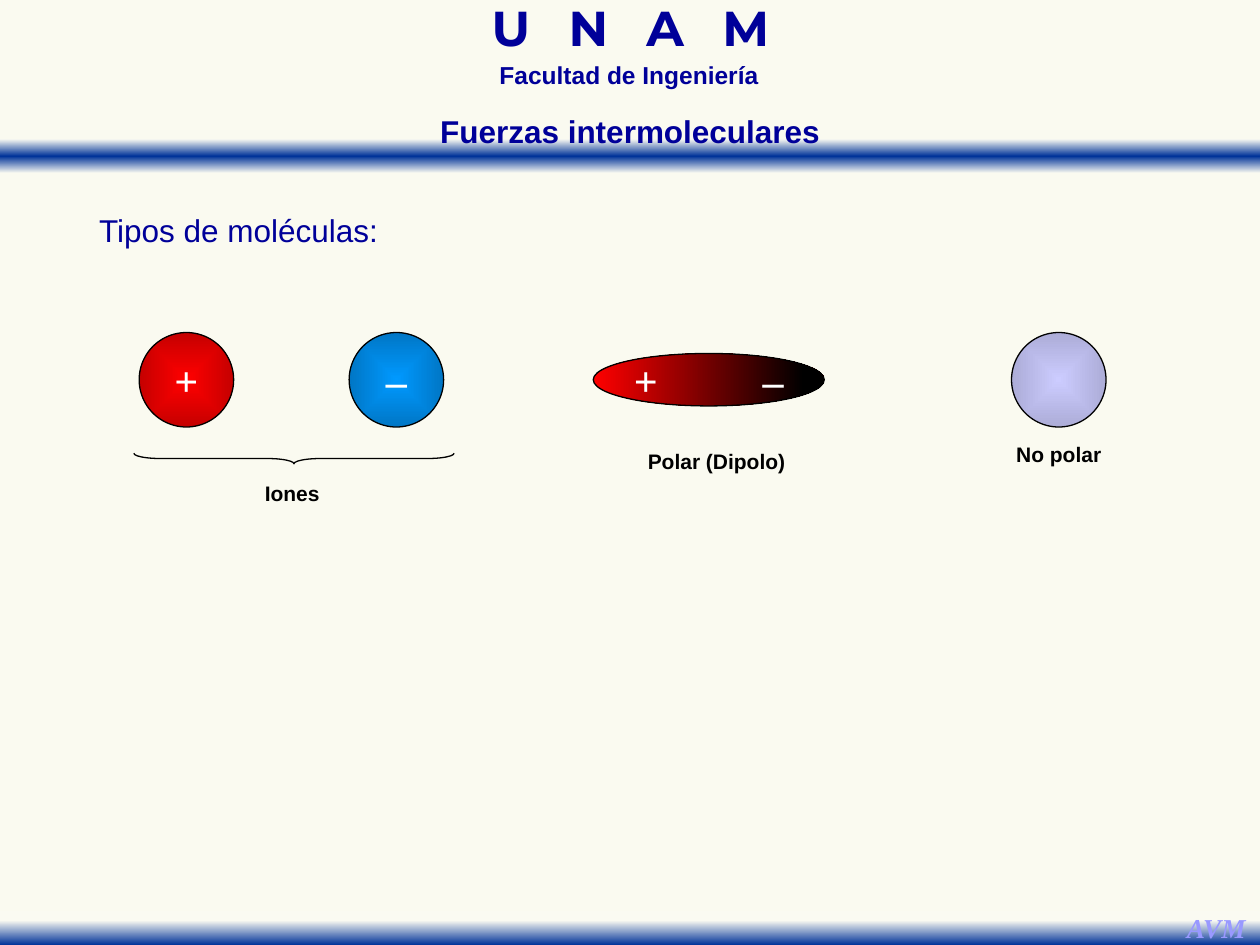
from lxml import etree
from pptx import Presentation
from pptx import util as u
from pptx.dml import color
from pptx.enum import shapes, text
from pptx.oxml import ns

Pt = u.Pt
ink = color.RGBColor.from_string
NAVY, WHITE, BLACK = "000099", "FFFFFF", "000000"


def shade(shape, stops, angle=None):
    shape.shadow.inherit = False
    shape.line.fill.background()
    shape.fill.gradient()
    gradient = shape.element.spPr.find(ns.qn("a:gradFill"))
    for child in list(gradient):
        gradient.remove(child)
    stop_list = etree.SubElement(gradient, ns.qn("a:gsLst"))
    for place, value in stops:
        stop = etree.SubElement(stop_list, ns.qn("a:gs"), pos=str(place * 1000))
        etree.SubElement(stop, ns.qn("a:srgbClr"), val=value)
    if angle is None:
        focus = etree.SubElement(gradient, ns.qn("a:path"), path="shape")
        sides = {side: "50000" for side in "ltrb"}
        etree.SubElement(focus, ns.qn("a:fillToRect"), **sides)
    else:
        etree.SubElement(gradient, ns.qn("a:lin"), ang=str(angle * 60000), scaled="1")


def write(shape, runs, size, font, tint, bold=True, italic=False, wrap=False):
    frame = shape.text_frame
    frame.word_wrap = wrap
    para = frame.paragraphs[0]
    para.alignment = text.PP_ALIGN.CENTER
    for words, spacing in runs:
        span = para.add_run()
        span.text = words
        span.font.size = Pt(size)
        span.font.name = font
        span.font.bold = bold
        span.font.italic = italic
        span.font.color.rgb = ink(tint)
        if spacing:
            span.font._element.set("spc", str(spacing * 100))
    return para


deck = Presentation()
deck.slide_width, deck.slide_height = Pt(720), Pt(540)
page = deck.slides.add_slide(deck.slide_layouts[6])
page.background.fill.solid()
page.background.fill.fore_color.rgb = ink("FAFAF0")

bands = [
    (79.5, [(0, "FAFAF2"), (50, "003399"), (100, "FAFAF2")]),
    (520.5, [(28, "FAFAF2"), (100, "003399")]),
]
for top, stops in bands:
    band = page.shapes.add_shape(
        shapes.MSO_SHAPE.RECTANGLE, 0, Pt(top), Pt(720), Pt(19.5))
    shade(band, stops, 90)

headings = [
    (219.5, 4.25, 281.5, 31, [("U N A ", 7), ("M", 0)], 28, "Montserrat", True, 0.7),
    (231, 35.25, 257, 19.5, [("Facultad de Ingeniería", 0)], 14, "Arial", True, 0.7),
    (204, 60.5, 312, 29, [("Fuerzas intermoleculares", 0)], 18, "Arial", True, 1),
    (49.5, 117, 312, 29, [("Tipos de moléculas:", 0)], 18, "Arial", False, 1),
]
for left, top, width, height, runs, size, font, bold, leading in headings:
    box = page.shapes.add_textbox(Pt(left), Pt(top), Pt(width), Pt(height))
    para = write(box, runs, size, font, NAVY, bold, wrap=True)
    para.line_spacing = leading
para.alignment = text.PP_ALIGN.JUSTIFY

signature = page.shapes.add_textbox(Pt(670.5), Pt(517), Pt(49), Pt(26.5))
write(signature, [("AVM", 0)], 15.6, "Times New Roman", "9999FF", italic=True)

molecules = [
    (79.5, 190, 54, 54, [(0, "FF0000"), (100, "C50000")], None, [("+", 0)]),
    (199.5, 190, 54, 54, [(0, "0099FF"), (100, "0076C5")], None, [("–", 0)]),
    (339, 202, 132, 30, [(0, "FF0000"), (91, "000000")], 0,
     [("+", 0), (" ", 54), ("–", 0)]),
    (578, 190, 54, 54, [(0, "CCCCFF"), (100, "ACACD7")], None, []),
]
for left, top, width, height, stops, angle, charges in molecules:
    molecule = page.shapes.add_shape(
        shapes.MSO_SHAPE.OVAL, Pt(left), Pt(top), Pt(width), Pt(height))
    shade(molecule, stops, angle)
    molecule.line.color.rgb = ink(BLACK)
    molecule.line.width = Pt(0.75)
    molecule.text_frame.vertical_anchor = text.MSO_ANCHOR.MIDDLE
    write(molecule, charges, 24, "Times New Roman", WHITE)

brace = page.shapes.add_shape(
    shapes.MSO_SHAPE.LEFT_BRACE, Pt(165), Pt(170.5), Pt(6), Pt(183))
brace.rotation = 270
brace.adjustments[0] = 2.54
brace.adjustments[1] = 0.5
brace.shadow.inherit = False
brace.fill.background()
brace.line.color.rgb = ink(BLACK)
brace.line.width = Pt(0.75)

labels = [
    (144, 271, 46, "Iones"),
    (362.5, 253, 94, "Polar (Dipolo)"),
    (571, 249, 68, "No polar"),
]
for left, top, width, words in labels:
    label = page.shapes.add_textbox(Pt(left), Pt(top), Pt(width), Pt(21.5))
    write(label, [(words, 0)], 12, "Arial", BLACK)

deck.save("out.pptx")
